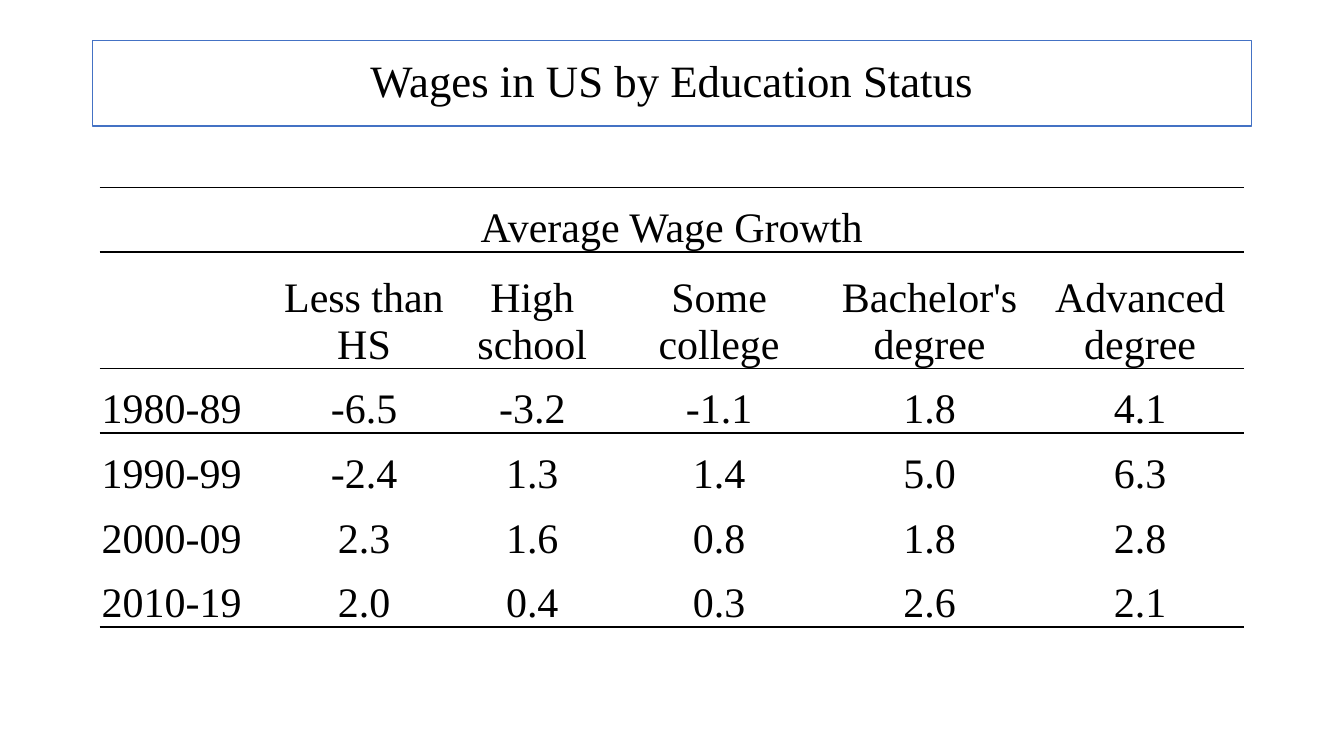
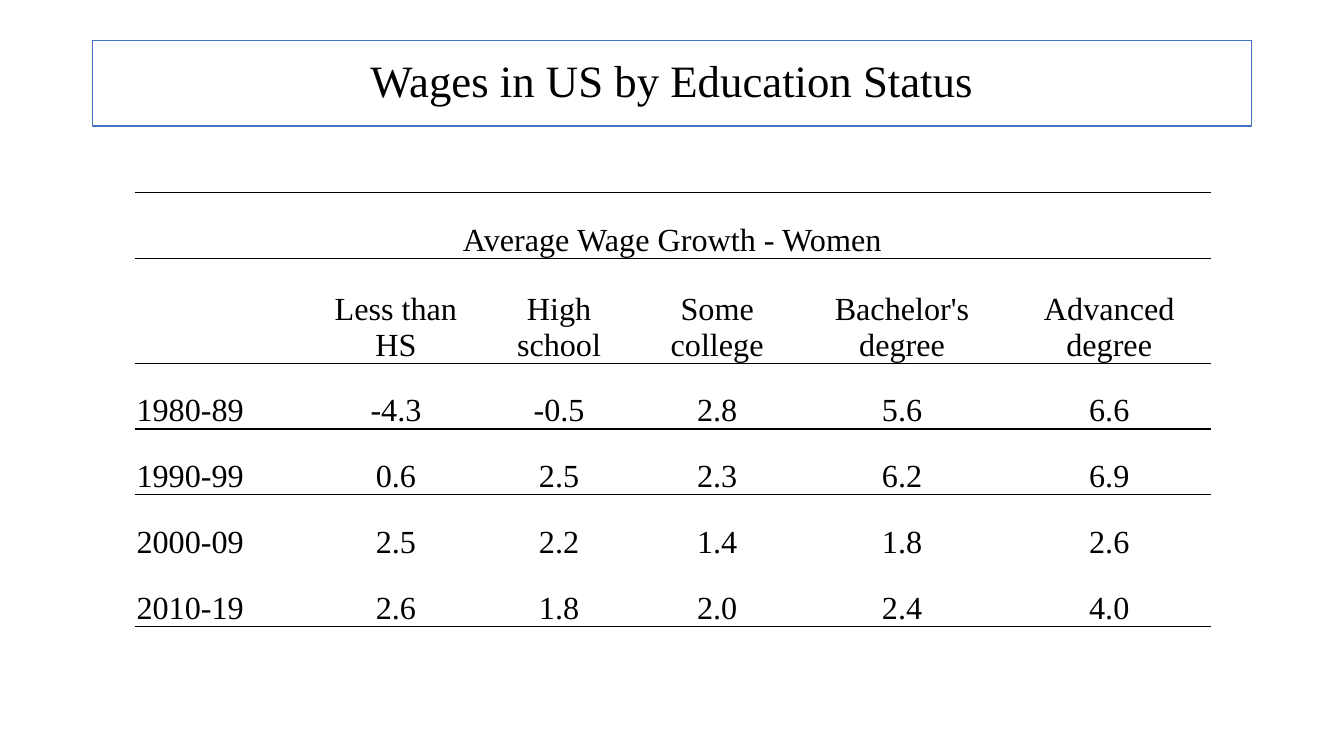
"""Build two slides with tables of average US wage growth by education."""
from lxml import etree
from pptx import Presentation
from pptx.dml.color import RGBColor
from pptx.enum.text import MSO_ANCHOR, PP_ALIGN
from pptx.oxml.ns import qn
from pptx.util import Cm, Pt

BLACK = RGBColor(0x00, 0x00, 0x00)
WHITE = RGBColor(0xFF, 0xFF, 0xFF)
BLUE = RGBColor(0x44, 0x72, 0xC4)
FONT = "Times New Roman"
LEFT, CENTER = PP_ALIGN.LEFT, PP_ALIGN.CENTER
MIDDLE, BOTTOM = MSO_ANCHOR.MIDDLE, MSO_ANCHOR.BOTTOM
NO_STYLE = "{2D5ABB26-0587-4C30-8999-92F81FD0307C}"

TITLE = "Wages in US by Education Status"
HEADERS = ["", "Less than HS", "High school", "Some college",
           "Bachelor's degree", "Advanced degree"]
DECADES = ["1980-89", "1990-99", "2000-09", "2010-19"]

TABLES = [
    {
        "caption": "Average Wage Growth",
        "left": 2.51, "top": 4.72,
        "columns": [4.52, 4.29, 4.19, 5.23, 5.38, 5.23],
        "row": 1.63, "header_row": 2.93,
        "size": 30, "top_margin": 0.05,
        "ruled_rows": {0, 1, 5},
        "values": [
            ["-6.5", "-3.2", "-1.1", "1.8", "4.1"],
            ["-2.4", "1.3", "1.4", "5.0", "6.3"],
            ["2.3", "1.6", "0.8", "1.8", "2.8"],
            ["2.0", "0.4", "0.3", "2.6", "2.1"],
        ],
    },
    {
        "caption": "Average Wage Growth - Women",
        "left": 3.39, "top": 4.85,
        "columns": [4.47, 4.24, 3.98, 3.99, 5.33, 5.11],
        "row": 1.66, "header_row": 2.64,
        "size": 23, "top_margin": 0.48,
        "ruled_rows": {0, 1, 2, 5},
        "values": [
            ["-4.3", "-0.5", "2.8", "5.6", "6.6"],
            ["0.6", "2.5", "2.3", "6.2", "6.9"],
            ["2.5", "2.2", "1.4", "1.8", "2.6"],
            ["2.6", "1.8", "2.0", "2.4", "4.0"],
        ],
    },
]


def format_text(text_frame, size, alignment):
    """Apply the shared font and the given alignment."""
    for paragraph in text_frame.paragraphs:
        paragraph.alignment = alignment
        paragraph.font.size = Pt(size)
        for run in paragraph.runs:
            run.font.name = FONT
            run.font.size = Pt(size)
            run.font.color.rgb = BLACK


def add_border(cell, side):
    """Draw a thin black border on one side of a cell."""
    properties = cell._tc.get_or_add_tcPr()
    line = etree.SubElement(properties, qn(f"a:{side}"), w=str(Pt(1)))
    fill = etree.SubElement(line, qn("a:solidFill"))
    etree.SubElement(fill, qn("a:srgbClr"), val=str(BLACK))


presentation = Presentation()
presentation.slide_width = Cm(33.87)
presentation.slide_height = Cm(19.05)
title_only = presentation.slide_layouts[5]

for data in TABLES:
    slide = presentation.slides.add_slide(title_only)

    title = slide.shapes.title
    title.left, title.top = Cm(2.33), Cm(1.02)
    title.width, title.height = Cm(29.21), Cm(2.16)
    title.fill.solid()
    title.fill.fore_color.rgb = WHITE
    title.line.color.rgb = BLUE
    title.line.width = Pt(1)
    title.text_frame.text = TITLE
    title.text_frame.vertical_anchor = MIDDLE
    title.text_frame.paragraphs[0].line_spacing = 0.9
    format_text(title.text_frame, 32, CENTER)

    rows = [[data["caption"]] + [""] * 5, HEADERS]
    rows += [[decade] + values for decade, values in zip(DECADES, data["values"])]
    heights = [data["row"], data["header_row"]] + [data["row"]] * len(DECADES)

    frame = slide.shapes.add_table(
        len(rows), len(HEADERS), Cm(data["left"]), Cm(data["top"]),
        Cm(sum(data["columns"])), Cm(sum(heights)))
    table = frame.table
    table.first_row = table.horz_banding = False
    frame._element.find(".//" + qn("a:tableStyleId")).text = NO_STYLE
    for column, width in zip(table.columns, data["columns"]):
        column.width = Cm(width)
    for row, height in zip(table.rows, heights):
        row.height = Cm(height)
    table.cell(0, 0).merge(table.cell(0, len(HEADERS) - 1))

    for row_index, texts in enumerate(rows):
        for column_index, text in enumerate(texts):
            cell = table.cell(row_index, column_index)
            cell.margin_left = cell.margin_right = Cm(0.05)
            cell.margin_top, cell.margin_bottom = Cm(data["top_margin"]), 0
            cell.vertical_anchor = BOTTOM
            if row_index == 0 or row_index - 1 in data["ruled_rows"]:
                add_border(cell, "lnT")
            if row_index in data["ruled_rows"]:
                add_border(cell, "lnB")
            cell.fill.background()
            if text:
                cell.text_frame.text = text
            is_decade = row_index > 1 and column_index == 0
            format_text(cell.text_frame, data["size"], LEFT if is_decade else CENTER)

presentation.save("out.pptx")
